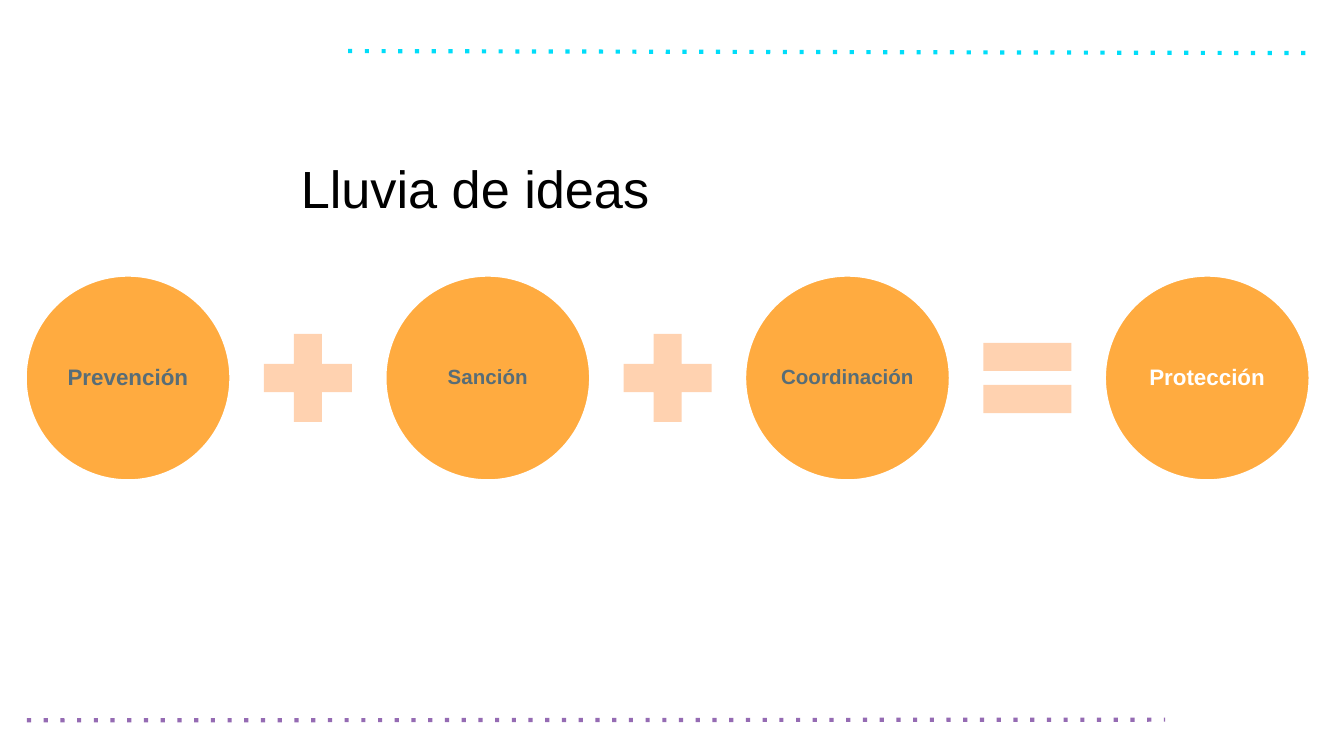
from lxml import etree
from pptx import Presentation
from pptx import util as u
from pptx.dml.color import RGBColor
from pptx.enum import shapes, text
from pptx.oxml import ns

COLS, ROWS = 1000, 562.5
CELL = u.Inches(10) // COLS

ORANGE = RGBColor(0xFF, 0xAB, 0x40)
PEACH = RGBColor(0xFF, 0xD2, 0xB0)
SLATE = RGBColor(0x58, 0x6D, 0x77)
WHITE = RGBColor(0xFF, 0xFF, 0xFF)
BLACK = RGBColor(0, 0, 0)
CYAN = RGBColor(0x00, 0xDD, 0xF9)
PURPLE = RGBColor(0x95, 0x6B, 0xB3)

KIND = shapes.MSO_SHAPE
TERMS = [("Prevención", 12, SLATE), ("Sanción", 11, SLATE),
         ("Coordinación", 11, SLATE), ("Protección", 12, WHITE)]
SIGNS = [KIND.MATH_PLUS, KIND.MATH_PLUS, KIND.MATH_EQUAL]


def grid(*cells):
    return [round(n * CELL) for n in cells]


def apply(item, style):
    for key, value in style.items():
        setattr(item, key, value)


def write(slide, box, words, size, color, frame, para, bold=False):
    area = slide.shapes.add_textbox(*grid(*box)).text_frame
    apply(area, frame)
    line = area.paragraphs[0]
    apply(line, para)
    run = line.add_run()
    run.text = words
    apply(run.font, {"name": "Arial", "size": u.Pt(size), "bold": bold})
    run.font.color.rgb = color


def draw(slide, kind, box, color):
    shape = slide.shapes.add_shape(kind, *grid(*box))
    shape.shadow.inherit = False
    shape.fill.solid()
    shape.fill.fore_color.rgb = color
    shape.line.fill.background()
    return shape


def rule(slide, ends, color):
    line = slide.shapes.add_connector(shapes.MSO_CONNECTOR.STRAIGHT, *grid(*ends))
    line.line.color.rgb = color
    line.line.width = u.Pt(2.25)
    props = line.element.spPr
    dash = etree.SubElement(props.find(ns.qn("a:ln")), ns.qn("a:prstDash"))
    dash.set("val", "dot")
    etree.SubElement(props, ns.qn("a:effectLst"))


def title(slide, box):
    write(slide, box, "Lluvia de ideas", 28, BLACK,
          {"word_wrap": False, "auto_size": text.MSO_AUTO_SIZE.SHAPE_TO_FIT_TEXT}, {})


def term(slide, box, words, size, color):
    left, top, side, _ = box
    disc = draw(slide, KIND.OVAL, box, ORANGE)
    disc.line.color.rgb = WHITE
    disc.line.width = u.Pt(2)
    inner = side * 0.71
    pad = (side - inner) / 2
    edge = u.Inches(0.02)
    frame = {"word_wrap": True, "vertical_anchor": text.MSO_ANCHOR.MIDDLE,
             "margin_left": edge, "margin_right": edge,
             "margin_top": edge, "margin_bottom": edge}
    para = {"alignment": text.PP_ALIGN.CENTER, "line_spacing": 0.9}
    write(slide, (left + pad, top + pad, inner, inner), words, size, color,
          frame, para, True)


def sum_row(slide, box):
    left, top, width, side = box
    step = (width - side) / (len(TERMS) - 1)
    sign = side * 0.58
    shift = (side + step - sign) / 2
    for i, (words, size, color) in enumerate(TERMS):
        x = left + i * step
        term(slide, (x, top, side, side), words, size, color)
        if i < len(SIGNS):
            draw(slide, SIGNS[i],
                 (x + shift, top + (side - sign) / 2, sign, sign), PEACH)


def main():
    deck = Presentation()
    deck.slide_width, deck.slide_height = grid(COLS, ROWS)
    slide = deck.slides.add_slide(deck.slide_layouts[6])
    rule(slide, (20, 536, 867, 535.5), PURPLE)
    rule(slide, (259, 38, 974, 39.5), CYAN)
    title(slide, (214, 111.5, 283, 57))
    sum_row(slide, (18.5, 204.5, 956.5, 153.5))
    deck.save("out.pptx")


if __name__ == "__main__":
    main()
